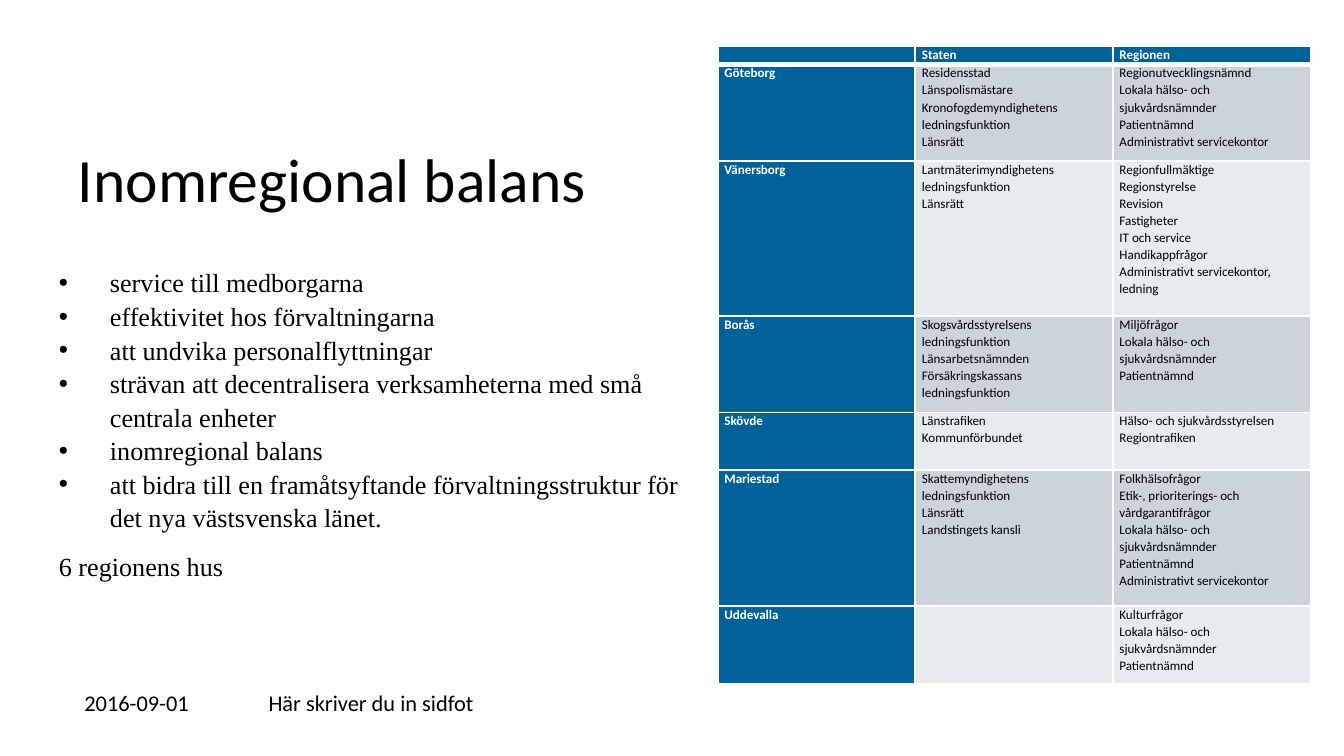
from lxml import etree
from pptx import Presentation
from pptx.dml.color import RGBColor
from pptx.enum.text import MSO_ANCHOR
from pptx.oxml.ns import qn
from pptx.util import Inches, Pt

TOP, MIDDLE = MSO_ANCHOR.TOP, MSO_ANCHOR.MIDDLE

THEME = {
    "sans": "Calibri", "serif": "Times New Roman",
    "text": "000000", "inverse": "FFFFFF", "border": "FFFFFF",
    "head": "006298", "bands": ("CCD3DD", "E7EAEF"),
    "title_size": 33, "body_size": 14, "footer_size": 12, "table_size": 7,
}

# Content
SLIDE_WIDTH = 10
SLIDE_HEIGHT = SLIDE_WIDTH * 9 / 16
TITLE = "Inomregional balans"
GOALS = [
    "service till medborgarna",
    "effektivitet hos förvaltningarna",
    "att undvika personalflyttningar",
    "strävan att decentralisera verksamheterna med små centrala enheter",
    "inomregional balans",
    "att bidra till en framåtsyftande förvaltningsstruktur för det nya västsvenska länet.",
]
CONCLUSION = "6 regionens hus"
FOOTERS = [("2016-09-01", 0.53, 1.34), ("Här skriver du in sidfot", 1.9, 4.88)]
HEADINGS = ["", "Staten", "Regionen"]
LOCAL_CARE = "Lokala hälso- och sjukvårdsnämnder"
# Town, state functions, regional functions, row height
TOWNS = [
    ("Göteborg",
     ["Residensstad", "Länspolismästare", "Kronofogdemyndighetens ledningsfunktion", "Länsrätt"],
     ["Regionutvecklingsnämnd", LOCAL_CARE, "Patientnämnd", "Administrativt servicekontor"], 0.72),
    ("Vänersborg",
     ["Lantmäterimyndighetens ledningsfunktion", "Länsrätt"],
     ["Regionfullmäktige", "Regionstyrelse", "Revision", "Fastigheter", "IT och service",
      "Handikappfrågor", "Administrativt servicekontor, ledning"], 1.15),
    ("Borås",
     ["Skogsvårdsstyrelsens ledningsfunktion", "Länsarbetsnämnden",
      "Försäkringskassans ledningsfunktion"],
     ["Miljöfrågor", LOCAL_CARE, "Patientnämnd"], 0.72),
    ("Skövde",
     ["Länstrafiken", "Kommunförbundet"],
     ["Hälso- och sjukvårdsstyrelsen", "Regiontrafiken"], 0.43),
    ("Mariestad",
     ["Skattemyndighetens ledningsfunktion", "Länsrätt", "Landstingets kansli"],
     ["Folkhälsofrågor", "Etik-, prioriterings- och vårdgarantifrågor", LOCAL_CARE,
      "Patientnämnd", "Administrativt servicekontor"], 1.01),
    ("Uddevalla", [], ["Kulturfrågor", LOCAL_CARE, "Patientnämnd"], 0.58),
]
HEADER_HEIGHT = 0.14
COLUMN_WIDTH = 1.47


def write(frame, lines, size, font="sans", color="text", bold=False,
          spacing=1.0, after=0, bullets=0):
    """Fill a text frame; the first `bullets` lines get a bullet."""
    for index, line in enumerate(lines or [""]):
        paragraph = frame.paragraphs[0] if index == 0 else frame.add_paragraph()
        paragraph.line_spacing = spacing
        paragraph.space_before = Pt(0)
        paragraph.space_after = Pt(after if index >= bullets - 1 else 0)
        if index < bullets:
            properties = paragraph._p.get_or_add_pPr()
            properties.set("marL", str(Inches(0.38)))
            properties.set("indent", str(-Inches(0.38)))
            etree.SubElement(properties, qn("a:buFont"), typeface="Arial")
            etree.SubElement(properties, qn("a:buChar"), char="•")
        if not line:
            # Keeps an empty cell from growing its row
            etree.SubElement(paragraph._p, qn("a:endParaRPr"), sz=str(size * 100))
            continue
        run = paragraph.add_run()
        run.text = line
        run.font.size = Pt(size)
        run.font.name = THEME[font]
        run.font.bold = bold
        run.font.color.rgb = RGBColor.from_string(THEME[color])


def add_text(slide, box, lines, anchor=TOP, inset=None, **style):
    frame = slide.shapes.add_textbox(*map(Inches, box)).text_frame
    frame.word_wrap = True
    frame.vertical_anchor = anchor
    if inset is not None:
        frame.margin_left = frame.margin_right = Inches(inset)
        frame.margin_top = frame.margin_bottom = Inches(inset)
    write(frame, lines, **style)


def format_cell(cell, lines, fill, heading, widths):
    cell.margin_left = cell.margin_right = Inches(0.05)
    cell.margin_top = cell.margin_bottom = 0
    for side, width in widths.items():
        line = etree.SubElement(cell._tc.get_or_add_tcPr(), qn(f"a:ln{side}"), w=str(Pt(width)))
        solid = etree.SubElement(line, qn("a:solidFill"))
        etree.SubElement(solid, qn("a:srgbClr"), val=THEME["border"])
    cell.fill.solid()
    cell.fill.fore_color.rgb = RGBColor.from_string(fill)
    write(cell.text_frame, lines, THEME["table_size"], spacing=1.07,
          color="inverse" if heading else "text", bold=heading)


def add_town_table(slide):
    rows = [[[heading] for heading in HEADINGS]]
    rows += [[[town], state, region] for town, state, region, _ in TOWNS]
    heights = [HEADER_HEIGHT] + [town[-1] for town in TOWNS]
    table = slide.shapes.add_table(
        len(rows), len(HEADINGS), Inches(5.34), Inches(0.34),
        Inches(COLUMN_WIDTH * len(HEADINGS)), Inches(sum(heights))).table
    for column in table.columns:
        column.width = Inches(COLUMN_WIDTH)
    for r, (row, height) in enumerate(zip(rows, heights)):
        table.rows[r].height = Inches(height)
        # A thick rule separates the header from the towns
        widths = {"L": 1, "R": 1, "T": 3 if r == 1 else 1, "B": 3 if r == 0 else 1}
        for c, lines in enumerate(row):
            heading = r == 0 or c == 0
            fill = THEME["head"] if heading else THEME["bands"][(r - 1) % 2]
            format_cell(table.cell(r, c), lines, fill, heading, widths)


def main():
    presentation = Presentation()
    presentation.slide_width = Inches(SLIDE_WIDTH)
    presentation.slide_height = Inches(SLIDE_HEIGHT)
    slide = presentation.slides.add_slide(presentation.slide_layouts[6])

    # Title
    add_text(slide, (0.58, 0.79, 5.2, 1.13), [TITLE], anchor=MIDDLE, inset=0,
             size=THEME["title_size"], spacing=0.9)
    # Table of towns
    add_town_table(slide)
    # Date and footer
    for text, left, width in FOOTERS:
        add_text(slide, (left, 5.08, width, 0.3), [text], anchor=MIDDLE,
                 size=THEME["footer_size"])
    # Goals
    add_text(slide, (0.34, 1.92, 5, 2.48), GOALS + [CONCLUSION], font="serif",
             size=THEME["body_size"], spacing=1.07, after=8, bullets=len(GOALS))

    presentation.save("out.pptx")


if __name__ == "__main__":
    main()
